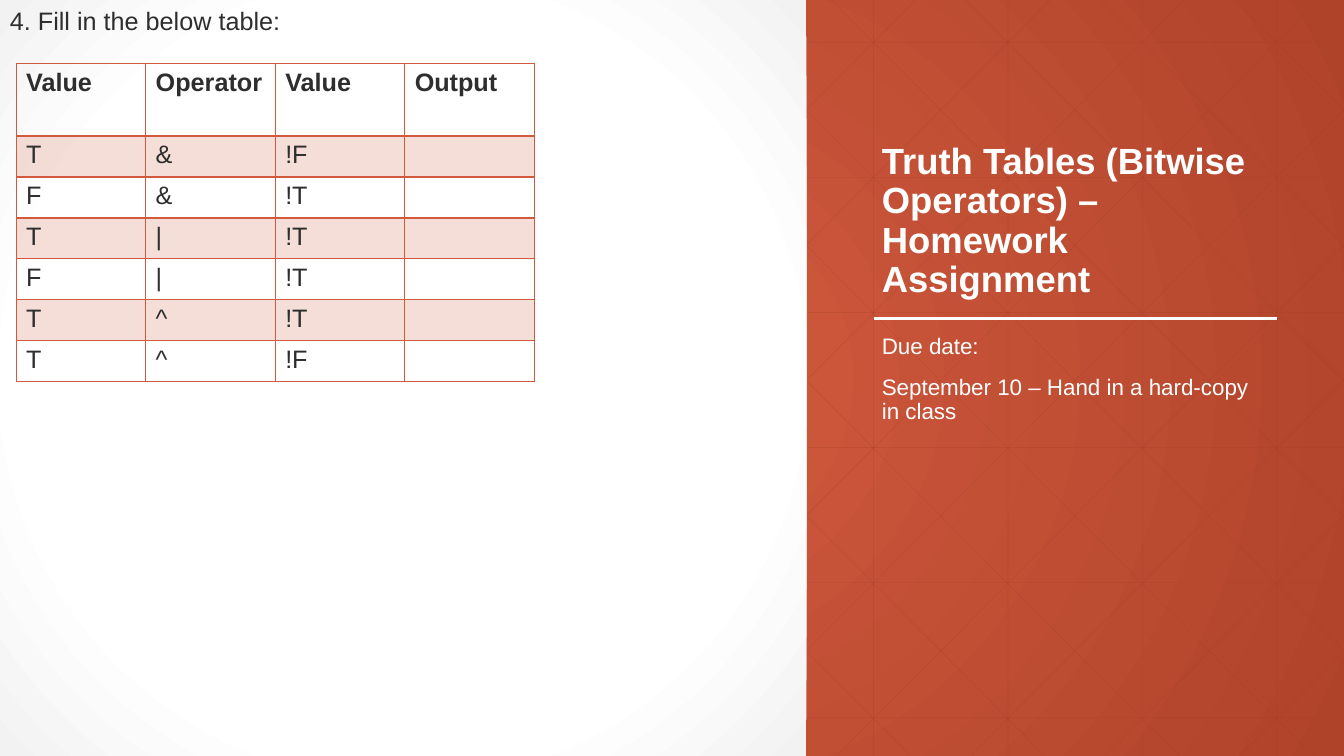
import lxml.etree
import pptx
import pptx.dml.color
import pptx.enum.shapes
import pptx.enum.text
import pptx.oxml
import pptx.oxml.ns
import pptx.util

WIDTH, HEIGHT = 13.33, 7.5
PANEL_LEFT = 0.6 * WIDTH
GRID_STEP = WIDTH / 10
ACCENT, INK, WHITE, LATTICE = "D15A3E", "2D2E2D", "FFFFFF", "A43F27"
ROWS = [
    ("Value", "Operator", "Value", "Output"),
    ("T", "&", "!F", ""),
    ("F", "&", "!T", ""),
    ("T", "|", "!T", ""),
    ("F", "|", "!T", ""),
    ("T", "^", "!T", ""),
    ("T", "^", "!F", ""),
]
qn = pptx.oxml.ns.qn
inches = pptx.util.Inches


def rgb(value):
    return pptx.dml.color.RGBColor.from_string(value)


def set_alpha(element, percent):
    """Make the first solid colour inside the element partly transparent."""
    colour = next(element.iter(qn("a:srgbClr")))
    lxml.etree.SubElement(colour, qn("a:alpha"), val=str(percent * 1000))


def set_radial(owner, fill, stops):
    """Fill with a circular gradient running from the centre outwards."""
    fill.gradient()
    plain = next(owner.iter(qn("a:gradFill")))
    marks = "".join(
        f'<a:gs pos="{share * 1000}"><a:srgbClr val="{colour}"/></a:gs>'
        for share, colour in stops)
    radial = pptx.oxml.parse_xml(
        f'<a:gradFill {pptx.oxml.ns.nsdecls("a")} rotWithShape="1"><a:gsLst>{marks}</a:gsLst>'
        '<a:path path="circle"><a:fillToRect l="50000" t="50000" r="50000" b="50000"/>'
        '</a:path></a:gradFill>')
    plain.getparent().replace(plain, radial)


def add_line(slide, start, end, colour, width, alpha=None):
    line = slide.shapes.add_connector(
        pptx.enum.shapes.MSO_CONNECTOR.STRAIGHT, *map(inches, (*start, *end)))
    line.line.color.rgb = rgb(colour)
    line.line.width = pptx.util.Pt(width)
    properties = line.element.spPr
    if alpha:
        set_alpha(properties, alpha)
    lxml.etree.SubElement(properties, qn("a:effectLst"))


def write(frame, *paragraphs, size=18, colour=INK, bold=False, spacing=None, before=None,
          anchor=pptx.enum.text.MSO_ANCHOR.TOP):
    frame.word_wrap = True
    frame.vertical_anchor = anchor
    for index, text in enumerate(paragraphs):
        paragraph = frame.add_paragraph() if index else frame.paragraphs[0]
        paragraph.text = text
        paragraph.line_spacing = spacing
        if before is not None:
            paragraph.space_before = pptx.util.Pt(before)
        for run in paragraph.runs:
            run.font.name = "Arial"
            run.font.size = pptx.util.Pt(size)
            run.font.bold = bold
            run.font.color.rgb = rgb(colour)


def add_text(slide, box, *paragraphs, **style):
    write(slide.shapes.add_textbox(*map(inches, box)).text_frame, *paragraphs, **style)


def add_lattice(slide, left, top, width, height):
    """Draw every hairline of the slide-wide lattice that reaches the title panel."""
    right, bottom = left + width, top + height
    run = 7.45
    slope = height / run
    segments = []
    for k in range(6, 10):
        x = left + GRID_STEP * (k + 0.5)
        segments.append(((x, top), (x, bottom)))
    for k in range(6):
        y = top + 0.42 + 1.34 * k
        segments.append(((left, y), (right, y)))
    for k in range(9):
        falling = left + 1.58 + GRID_STEP * k
        end = min(right, falling + run)
        segments.append(((falling, top), (end, top + (end - falling) * slope)))
        rising = left + 9.08 + GRID_STEP * k
        end = min(right, rising)
        segments.append(((rising - run, bottom), (end, top + (rising - end) * slope)))
    for start, end in segments:
        add_line(slide, start, end, LATTICE, 0.5, alpha=25)


def add_title_panel(slide, left, top, width, height):
    text_left, text_width = left + 0.65, 0.75 * width
    rule_y = top + 3.16
    add_line(slide, (left + width / 8, rule_y), (left + width * 7 / 8, rule_y), WHITE, 1.5)
    add_text(slide, (text_left, rule_y - 2.53, text_width, 2.4),
             "Truth Tables (Bitwise Operators) – \vHomework Assignment",
             size=26, colour=WHITE, bold=True, spacing=0.9,
             anchor=pptx.enum.text.MSO_ANCHOR.BOTTOM)
    add_text(slide, (text_left, rule_y + 0.12, text_width, height / 3),
             "Due date:", "September 10 – Hand in a hard-copy in class",
             size=16, colour=WHITE, spacing=0.9, before=12)


def set_borders(cell, widths):
    """Draw the cell's sides; they must precede its fill in the XML."""
    properties = cell._tc.get_or_add_tcPr()
    for index, (side, width) in enumerate(widths.items()):
        properties.insert(index, pptx.oxml.parse_xml(
            f'<a:ln{side} {pptx.oxml.ns.nsdecls("a")} w="{pptx.util.Pt(width)}"><a:solidFill>'
            f'<a:srgbClr val="{ACCENT}"/></a:solidFill><a:prstDash val="solid"/></a:ln{side}>'))


def add_truth_table(slide, left, top, width, height):
    header_height = 0.72
    row_height = (height - header_height) / (len(ROWS) - 1)
    table = slide.shapes.add_table(
        len(ROWS), len(ROWS[0]), *map(inches, (left, top, width, height))).table
    table.first_row = table.horz_banding = False
    for column in table.columns:
        column.width = inches(width / len(ROWS[0]))
    for r, values in enumerate(ROWS):
        table.rows[r].height = inches(row_height if r else header_height)
        for c, value in enumerate(values):
            cell = table.cell(r, c)
            write(cell.text_frame, value, bold=r == 0)
            if r % 2:
                cell.fill.solid()
                cell.fill.fore_color.rgb = rgb(ACCENT)
                set_alpha(cell._tc.tcPr, 20)
            else:
                cell.fill.background()
            set_borders(cell, {"L": 1, "R": 1, "T": 2 if r == 1 else 1, "B": 1 if r else 2})


def add_exercise_area(slide, left, top, width, height):
    sheet = slide.shapes.add_shape(
        pptx.enum.shapes.MSO_SHAPE.RECTANGLE, *map(inches, (left, top, width, height)))
    sheet.shadow.inherit = False
    sheet.line.fill.background()
    set_radial(sheet.element.spPr, sheet.fill, [(0, WHITE), (69, WHITE), (100, "F2F2F2")])
    add_text(slide, (left, top, width, 2.83), "4. Fill in the below table:")
    add_truth_table(slide, left + 0.16, top + 0.63, 5.14, 3.16)


def main():
    deck = pptx.Presentation()
    deck.slide_width, deck.slide_height = inches(WIDTH), inches(HEIGHT)
    slide = deck.slides.add_slide(deck.slide_layouts[6])
    set_radial(slide.element, slide.background.fill, [(0, ACCENT), (100, "AF432A")])
    add_lattice(slide, 0, 0, WIDTH, HEIGHT)
    add_exercise_area(slide, 0, 0, PANEL_LEFT, HEIGHT)
    add_title_panel(slide, PANEL_LEFT, 0, WIDTH - PANEL_LEFT, HEIGHT)
    deck.save("out.pptx")


if __name__ == "__main__":
    main()
